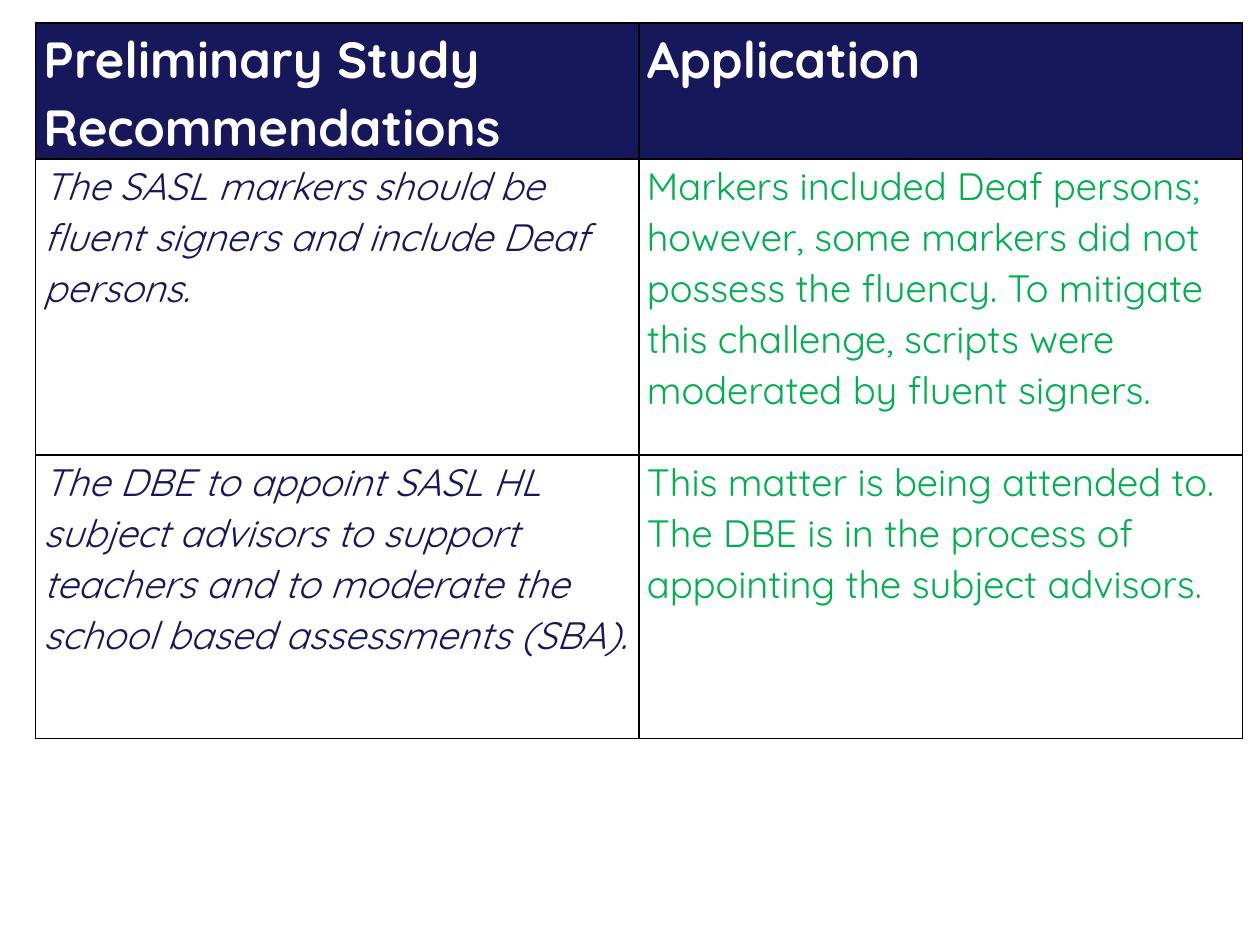
from lxml import etree
from pptx import Presentation
from pptx.dml.color import RGBColor
from pptx.oxml.ns import qn
from pptx.util import Inches, Pt

COLORS = {"navy": "17175C", "green": "00B050", "white": "FFFFFF", "black": "000000"}
FONT = "Quicksand"
CM_PER_INCH = 2.54
HEADINGS = ["Preliminary Study Recommendations", "Application"]
RECOMMENDATIONS = [
    ("The SASL markers should be fluent signers and include Deaf persons.",
     "Markers included Deaf persons; however, some markers did not possess the fluency. "
     "To mitigate this challenge, scripts were moderated by fluent signers."),
    ("The DBE to appoint SASL HL subject advisors to support teachers and to moderate "
     "the school based assessments (SBA).",
     "This matter is being attended to. The DBE is in the process of appointing "
     "the subject advisors."),
]
ROW_HEIGHTS = [1.18, 2.59, 2.48]
COL_WIDTH = 5.28


def rgb(name):
    return RGBColor.from_string(COLORS[name])


def add_borders(cell):
    tcPr = cell._tc.get_or_add_tcPr()
    for i, side in enumerate(("lnL", "lnR", "lnT", "lnB")):
        ln = etree.Element(qn(f"a:{side}"), w=str(Pt(1)))
        fill = etree.SubElement(ln, qn("a:solidFill"))
        etree.SubElement(fill, qn("a:srgbClr"), val=COLORS["black"])
        tcPr.insert(i, ln)


def fill_cell(cell, text, size, color, bold=False, italic=False, fill=None):
    cell.margin_left = cell.margin_right = Inches(0.07)
    cell.margin_top = cell.margin_bottom = 0
    if fill:
        cell.fill.solid()
        cell.fill.fore_color.rgb = rgb(fill)
    else:
        cell.fill.background()
    add_borders(cell)
    p = cell.text_frame.paragraphs[0]
    p.text = text
    p.line_spacing = 1.07
    p.font.name = FONT
    p.font.size = Pt(size)
    p.font.bold = bold
    p.font.italic = italic
    p.font.color.rgb = rgb(color)


def add_recommendations_table(slide):
    table = slide.shapes.add_table(
        len(ROW_HEIGHTS), len(HEADINGS), Inches(0.31), Inches(0.2),
        Inches(COL_WIDTH * len(HEADINGS)), Inches(sum(ROW_HEIGHTS))).table
    table.horz_banding = False
    for column in table.columns:
        column.width = Inches(COL_WIDTH)
    for row, height in zip(table.rows, ROW_HEIGHTS):
        row.height = Inches(height)
    for c, heading in enumerate(HEADINGS):
        fill_cell(table.cell(0, c), heading, 32, "white", bold=True, fill="navy")
    for r, (recommendation, application) in enumerate(RECOMMENDATIONS, 1):
        fill_cell(table.cell(r, 0), recommendation, 24, "navy", italic=True)
        fill_cell(table.cell(r, 1), application, 24, "green")


def main():
    prs = Presentation()
    prs.slide_width = Inches(28 / CM_PER_INCH)
    prs.slide_height = Inches(21 / CM_PER_INCH)
    slide = prs.slides.add_slide(prs.slide_layouts[6])
    add_recommendations_table(slide)
    prs.save("out.pptx")


if __name__ == "__main__":
    main()
